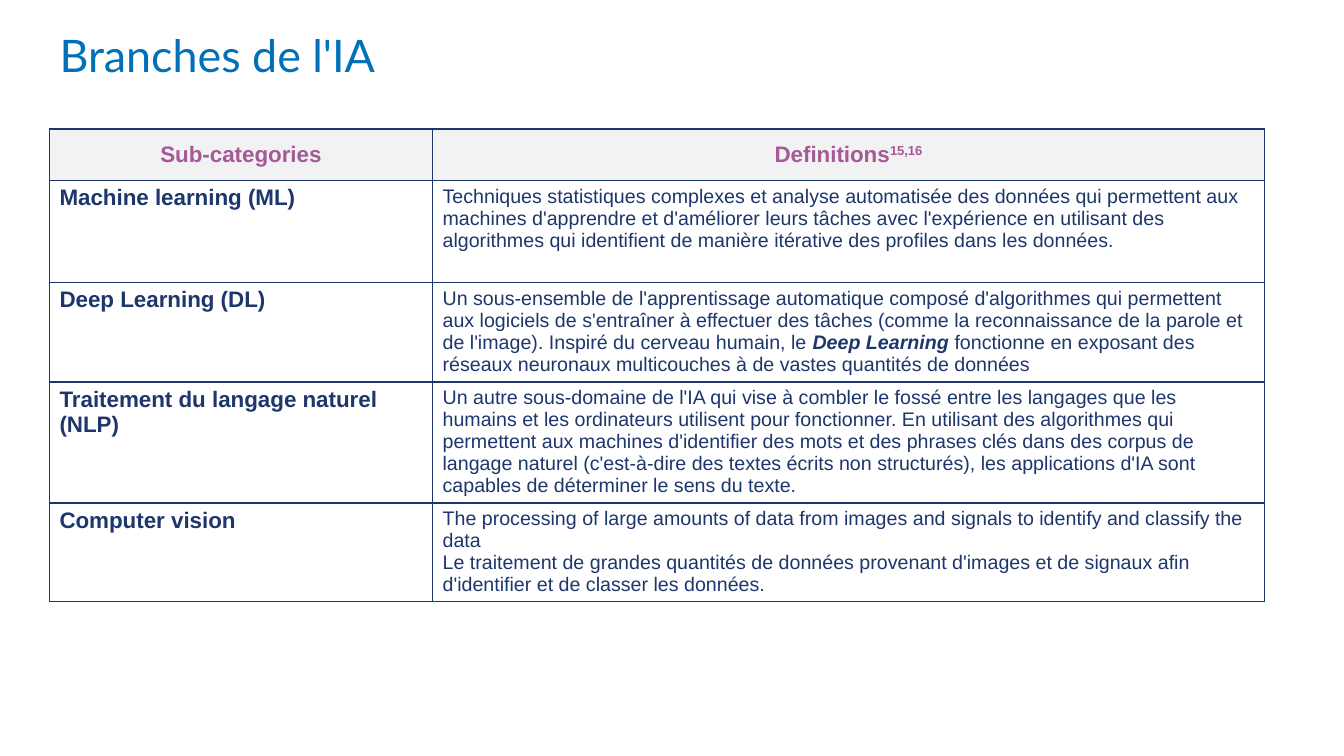
from lxml import etree
from pptx import Presentation
from pptx.dml.color import RGBColor
from pptx.enum.text import MSO_ANCHOR as Anchor, PP_ALIGN as Align
from pptx.oxml.ns import qn
from pptx.util import Inches, Pt

BLUE = RGBColor(0x00, 0x70, 0xB9)
NAVY = RGBColor(0x1D, 0x36, 0x6C)
PURPLE = RGBColor(0xA5, 0x59, 0x96)
GREY = RGBColor(0xF2, 0xF2, 0xF2)
WHITE = RGBColor(0xFF, 0xFF, 0xFF)

TITLE = "Branches de l'IA"
# Each text is a list of paragraphs, each paragraph a list of (words, style) runs.
HEADER = (
    [[("Sub-categories", "")]],
    [[("Definitions", ""), ("15,16", "superscript")]],
)
BRANCHES = [
    ("Machine learning (ML)", [[
        ("Techniques statistiques complexes et analyse automatisée des données qui "
         "permettent aux machines d'apprendre et d'améliorer leurs tâches avec "
         "l'expérience en utilisant des algorithmes qui identifient de manière "
         "itérative des profiles dans les données.", "")]]),
    ("Deep Learning (DL)", [[
        ("Un sous-ensemble de l'apprentissage automatique composé d'algorithmes qui "
         "permettent aux logiciels de s'entraîner à effectuer des tâches (comme la "
         "reconnaissance de la parole et de l'image). Inspiré du cerveau humain, le ", ""),
        ("Deep Learning ", "emphasis"),
        ("fonctionne en exposant des réseaux neuronaux multicouches à de vastes "
         "quantités de données", "")]]),
    ("Traitement du langage naturel (NLP)", [[
        ("Un autre sous-domaine de l'IA qui vise à combler le fossé entre les langages "
         "que les humains et les ordinateurs utilisent pour fonctionner. En utilisant "
         "des algorithmes qui permettent aux machines d'identifier des mots et des "
         "phrases clés dans des corpus de langage naturel (c'est-à-dire des textes "
         "écrits non structurés), les applications d'IA sont capables de déterminer "
         "le sens du texte.", "")]]),
    ("Computer vision", [
        [("The processing of large amounts of data from images and signals to identify "
          "and classify the data", "")],
        [("Le traitement de grandes quantités de données provenant d'images et de "
          "signaux afin d'identifier et de classer les données.", "")]]),
]
LEFT, WIDTH = 0.49, 12.05
COLUMN_WIDTHS = (3.8, 8.25)
ROW_HEIGHTS = (0.51, 1.01, 0.99, 1.2, 0.98)


def write(frame, paragraphs, size, color, font="Arial", bold=False,
          align=Align.LEFT, spacing=None):
    for number, runs in enumerate(paragraphs):
        paragraph = frame.add_paragraph() if number else frame.paragraphs[0]
        paragraph.alignment = align
        if spacing:
            paragraph.line_spacing = spacing
        for words, style in runs:
            run = paragraph.add_run()
            run.text = words
            run.font.name = font
            run.font.size = Pt(size)
            run.font.color.rgb = color
            run.font.bold = bold or style == "emphasis"
            run.font.italic = style == "emphasis"
            if style == "superscript":
                run.font._element.set("baseline", "30000")


def add_borders(cell, color, width):
    properties = cell._tc.get_or_add_tcPr()
    for position, side in enumerate(("lnL", "lnR", "lnT", "lnB")):
        line = etree.Element(qn(f"a:{side}"), w=str(Pt(width)))
        solid = etree.SubElement(line, qn("a:solidFill"))
        etree.SubElement(solid, qn("a:srgbClr"), val=str(color))
        properties.insert(position, line)


def fill_cell(cell, paragraphs, background, anchor=Anchor.TOP, **text_format):
    cell.fill.solid()
    cell.fill.fore_color.rgb = background
    cell.vertical_anchor = anchor
    add_borders(cell, NAVY, 1)
    write(cell.text_frame, paragraphs, **text_format)


def main():
    deck = Presentation()
    deck.slide_width, deck.slide_height = Inches(13.33), Inches(7.5)
    slide = deck.slides.add_slide(deck.slide_layouts[5])

    title = slide.shapes.title
    title.left, title.top = Inches(LEFT), Inches(0.22)
    title.width, title.height = Inches(WIDTH), Inches(0.65)
    title.text_frame.vertical_anchor = Anchor.BOTTOM
    write(title.text_frame, [[(TITLE, "")]], size=32, color=BLUE, font="Lato", spacing=0.9)

    table = slide.shapes.add_table(
        len(ROW_HEIGHTS), len(COLUMN_WIDTHS), Inches(LEFT), Inches(1.28),
        Inches(WIDTH), Inches(sum(ROW_HEIGHTS))).table
    for column, width in zip(table.columns, COLUMN_WIDTHS):
        column.width = Inches(width)
    for row, height in zip(table.rows, ROW_HEIGHTS):
        row.height = Inches(height)

    for column, heading in enumerate(HEADER):
        fill_cell(table.cell(0, column), heading, GREY, anchor=Anchor.MIDDLE,
                  size=16, color=PURPLE, bold=True, align=Align.CENTER)
    for row, (branch, definition) in enumerate(BRANCHES, start=1):
        fill_cell(table.cell(row, 0), [[(branch, "")]], WHITE, size=16, color=NAVY, bold=True)
        fill_cell(table.cell(row, 1), definition, WHITE, size=14, color=NAVY)

    deck.save("out.pptx")


if __name__ == "__main__":
    main()
